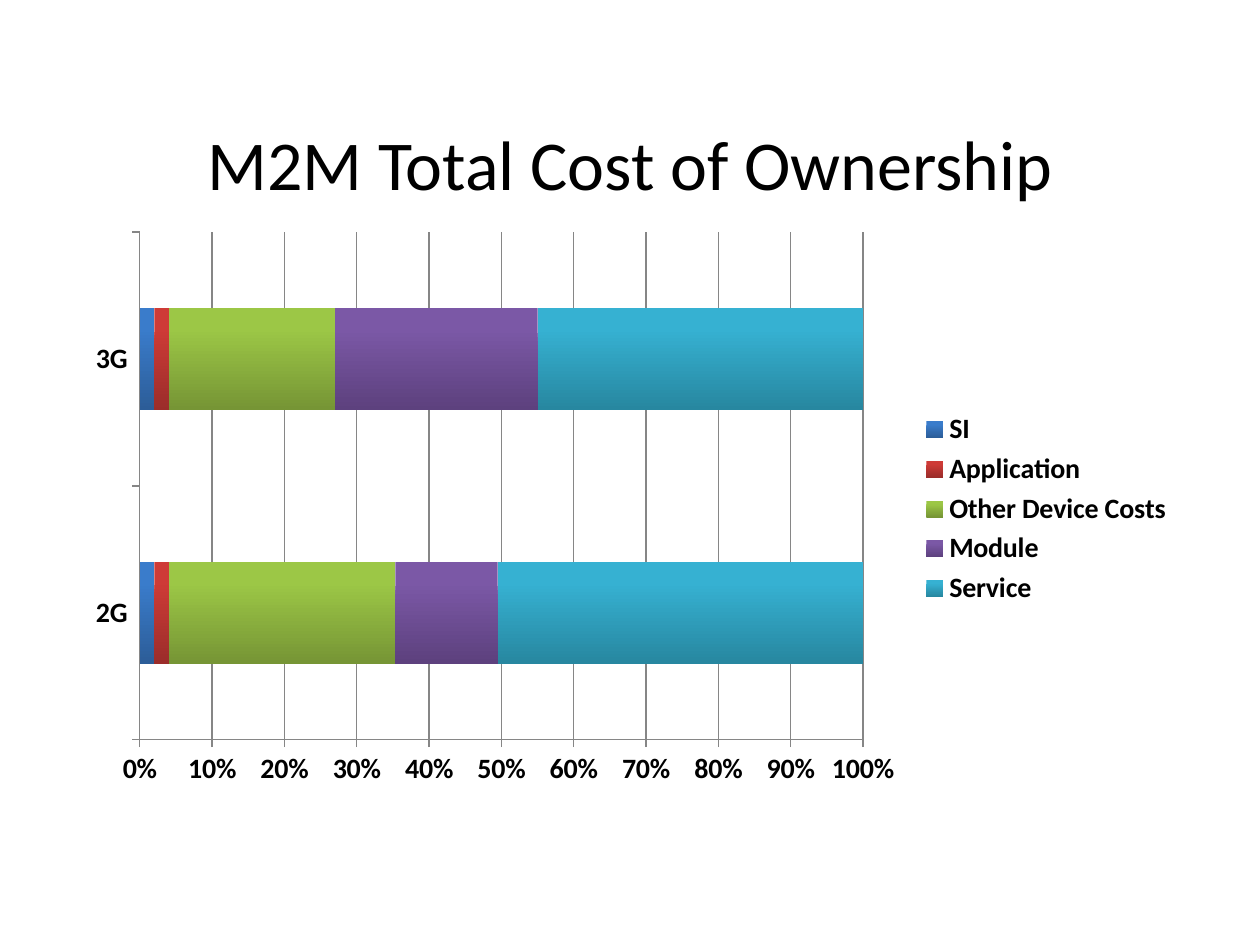
"""Build the M2M total cost of ownership slide."""
from dataclasses import dataclass

from lxml import etree
from pptx import Presentation
from pptx.chart import data as chart_data
from pptx.dml.color import RGBColor
from pptx.enum import chart as charts, text
from pptx.oxml import ns
from pptx.util import Inches, Pt


@dataclass(frozen=True)
class Theme:
    """Colours and type sizes of the slide."""
    font: str = "Calibri"
    ink: str = "000000"
    rule: str = "868686"
    title_size: int = 40
    chart_size: int = 16


@dataclass(frozen=True)
class Cost:
    """One cost share for 2G and 3G, with its gradient colours."""
    name: str
    shares: tuple[int, int]
    top: str
    bottom: str


THEME = Theme()
GENERATIONS = ("2G", "3G")
COSTS = (
    Cost("SI", (2, 2), "3A7CCB", "2C5D98"),
    Cost("Application", (2, 2), "CE3B37", "9B2D2A"),
    Cost("Other Device Costs", (31, 23), "9CC746", "769535"),
    Cost("Module", (14, 28), "7B58A6", "5D417E"),
    Cost("Service", (50, 45), "36B1D2", "2787A0"),
)


def style_font(font, size: int) -> None:
    """Set the theme typeface and ink at the given size."""
    font.name = THEME.font
    font.size = Pt(size)
    font.color.rgb = RGBColor.from_string(THEME.ink)


def style_line(line) -> None:
    """Give a chart line the thin grey rule."""
    line.width = Pt(0.75)
    line.color.rgb = RGBColor.from_string(THEME.rule)


def fill_bars(series, cost: Cost) -> None:
    """Shade a series from its top colour down to its bottom colour."""
    fill = series.format.fill
    fill.gradient()
    fill.gradient_angle = 270
    for stop, colour, position in zip(fill.gradient_stops, (cost.top, cost.bottom), (0.2, 1)):
        stop.color.rgb = RGBColor.from_string(colour)
        stop.position = position


def place_plot(chart, **bounds: float) -> None:
    """Fix the inner plot area at fractions of the chart frame."""
    area = chart.plots[0]._element.getparent()
    for old in area.findall(ns.qn("c:layout")):
        area.remove(old)
    layout = etree.Element(ns.qn("c:layout"))
    manual = etree.SubElement(layout, ns.qn("c:manualLayout"))
    settings = {"layoutTarget": "inner", "xMode": "edge", "yMode": "edge", **bounds}
    for tag, value in settings.items():
        etree.SubElement(manual, ns.qn(f"c:{tag}")).set("val", str(value))
    area.insert(0, layout)


def add_title(slide, wording: str) -> None:
    """Place and format the slide title."""
    title = slide.shapes.title
    title.left, title.top = Inches(0.5), Inches(0.83)
    title.width, title.height = Inches(9), Inches(0.92)
    title.text_frame.vertical_anchor = text.MSO_ANCHOR.MIDDLE
    paragraph = title.text_frame.paragraphs[0]
    paragraph.alignment = text.PP_ALIGN.CENTER
    run = paragraph.add_run()
    run.text = wording
    style_font(run.font, THEME.title_size)


def add_cost_chart(slide) -> None:
    """Add the stacked cost shares of each generation."""
    shares = chart_data.CategoryChartData(number_format="0")
    shares.categories = GENERATIONS
    for cost in COSTS:
        shares.add_series(cost.name, cost.shares)
    chart = slide.shapes.add_chart(
        charts.XL_CHART_TYPE.BAR_STACKED_100,
        Inches(0.58), Inches(1.75), Inches(8.83), Inches(4.58), shares,
    ).chart
    style_font(chart.font, THEME.chart_size)
    chart.font.bold = True
    chart.has_title = False
    chart.has_legend = True
    chart.legend.position = charts.XL_LEGEND_POSITION.RIGHT
    chart.legend.include_in_layout = False

    plot = chart.plots[0]
    plot.gap_width, plot.overlap = 150, 100
    plot.vary_by_categories = False
    for series, cost in zip(plot.series, COSTS):
        fill_bars(series, cost)

    for axis in (chart.category_axis, chart.value_axis):
        axis.major_tick_mark = charts.XL_TICK_MARK.OUTSIDE
        axis.minor_tick_mark = charts.XL_TICK_MARK.NONE
        style_line(axis.format.line)
    percent = chart.value_axis
    percent.minimum_scale, percent.maximum_scale, percent.major_unit = 0, 1, 0.1
    percent.has_major_gridlines = True
    style_line(percent.major_gridlines.format.line)
    percent.tick_labels.number_format = "0%"
    percent.tick_labels.number_format_is_linked = False
    place_plot(chart, x=0.06, y=0.02, w=0.65, h=0.88)


def main() -> None:
    """Build and save the presentation."""
    deck = Presentation()
    deck.slide_width, deck.slide_height = Inches(10), Inches(7.5)
    slide = deck.slides.add_slide(deck.slide_layouts.get_by_name("Title Only"))
    add_title(slide, "M2M Total Cost of Ownership")
    add_cost_chart(slide)
    deck.save("out.pptx")


if __name__ == "__main__":
    main()
